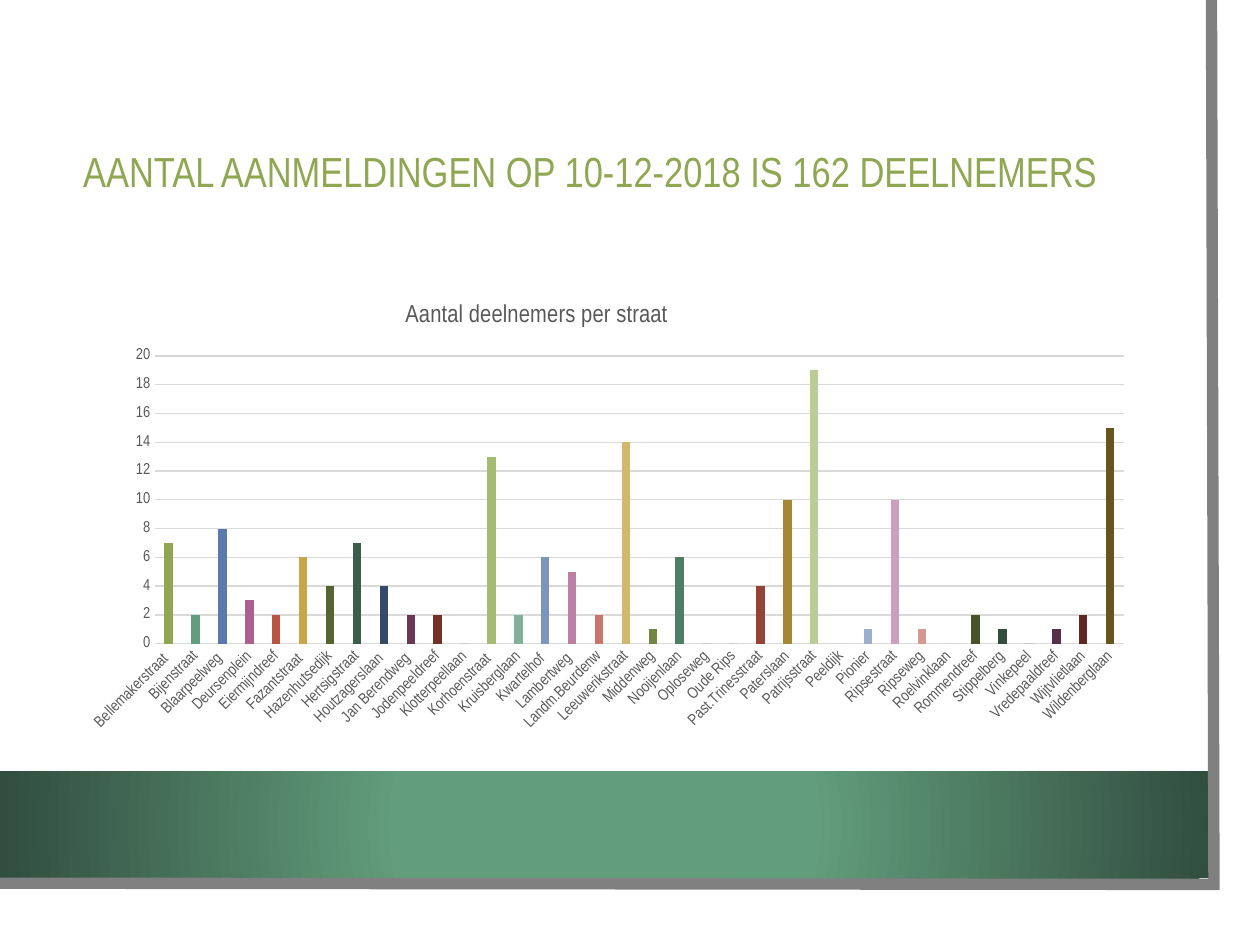
from lxml.etree import SubElement, fromstring
from pptx import Presentation
from pptx.chart.data import CategoryChartData
from pptx.dml.color import RGBColor
from pptx.enum.chart import XL_CHART_TYPE as ChartType, XL_TICK_MARK as TickMark
from pptx.enum.shapes import MSO_SHAPE as Preset
from pptx.enum.text import MSO_ANCHOR as Anchor, PP_ALIGN as Align
from pptx.oxml.ns import nsdecls, qn
from pptx.util import Pt

FONT = "Arial Narrow"
GREY, GRID = "595959", "D9D9D9"
TITLE = "AANTAL AANMELDINGEN OP 10-12-2018 IS 162 DEELNEMERS"
CHART_TITLE = "Aantal deelnemers per straat"
STREETS = [
    ("Bellemakerstraat ", 7, "8FA751"), ("Bijenstraat", 2, "629D7D"),
    ("Blaarpeelweg ", 8, "5A7AAB"), ("Deursenplein", 3, "AA618F"),
    ("Eiermijndreef", 2, "BA5445"), ("Fazantstraat ", 6, "C8A547"),
    ("Hazenhutsedijk", 4, "566431"), ("Hertsigstraat", 7, "3B5E4B"),
    ("Houtzagerslaan ", 4, "354968"), ("Jan Berendweg ", 2, "683856"),
    ("Jodenpeeldreef", 2, "703229"), ("Klotterpeellaan", 0, "7D6525"),
    ("Korhoenstraat ", 13, "A6BB72"), ("Kruisberglaan", 2, "81B197"),
    ("Kwartelhof ", 6, "7B95BC"), ("Lambertweg ", 5, "BB81A5"),
    ("Landm.Beurdenw", 2, "C8766A"), ("Leeuwerikstraat", 14, "D3B76C"),
    ("Middenweg", 1, "728641"), ("Nooijenlaan", 6, "4E7E64"),
    ("Oploseweg", 0, "46618A"), ("Oude Rips", 0, "8B4B73"),
    ("Past.Trinesstraat", 4, "954337"), ("Paterslaan", 10, "A78732"),
    ("Patrijsstraat", 19, "BCCC95"), ("Peeldijk", 0, "A1C4B1"),
    ("Pionier", 1, "9CAFCD"), ("Ripsestraat", 10, "CCA0BC"),
    ("Ripseweg", 1, "D6988F"), ("Roelvinklaan", 0, "DEC991"),
    ("Rommendreef", 2, "485329"), ("Stippelberg", 1, "314E3E"),
    ("Vinkepeel", 0, "2C3D56"), ("Vredepaaldreef", 1, "572F48"),
    ("Wijtvlietlaan", 2, "5D2A23"), ("Wildenberglaan", 15, "68541F"),
]
BAND_STOPS = [(34, "629D7D"), (100, "314E3E")]
FRAME_POINTS = [(692.3, 0), (693.7, 505.4), (-1.4, 504.7)]
LEFT, WIDTH = 40.3, 614.2
CHART_TOP, CHART_HEIGHT = 162.7, 260.6


def paint(target, color):
    target.solid()
    target.fore_color.rgb = RGBColor.from_string(color)


def style_font(font, size, color):
    font.name, font.size, font.bold = FONT, Pt(size), False
    font.color.rgb = RGBColor.from_string(color)


def style_line(line, color, width):
    paint(line.fill, color)
    line.width = Pt(width)


def write_text(frame, text, size, color, align=None, spacing=None):
    paragraph = frame.paragraphs[0]
    paragraph.alignment, paragraph.line_spacing = align, spacing
    run = paragraph.add_run()
    run.text = text
    style_font(run.font, size, color)


def add_panel(slide, left, top, width, height, color):
    shape = slide.shapes.add_shape(Preset.RECTANGLE, Pt(left), Pt(top), Pt(width), Pt(height))
    shape.shadow.inherit = False
    shape.line.fill.background()
    paint(shape.fill, color)
    return shape


def fill_radial(shape, stops):
    marks = "".join(f'<a:gs pos="{position * 1000}"><a:srgbClr val="{color}"/></a:gs>'
                    for position, color in stops)
    gradient = fromstring(
        f'<a:gradFill {nsdecls("a")} rotWithShape="1"><a:gsLst>{marks}</a:gsLst><a:path path="circle">'
        '<a:fillToRect l="50000" t="50000" r="50000" b="50000"/></a:path></a:gradFill>')
    properties = shape._element.spPr
    properties.replace(properties.find(qn("a:solidFill")), gradient)


def manual_layout(target="", **lengths):
    extents = {"x": WIDTH, "y": CHART_HEIGHT, "w": WIDTH, "h": CHART_HEIGHT}
    modes = "".join(f'<c:{axis}Mode val="edge"/>' for axis in "xy")
    values = "".join(f'<c:{name} val="{length / extents[name]}"/>'
                     for name, length in lengths.items())
    return fromstring(f'<c:layout {nsdecls("c")}><c:manualLayout>{target}{modes}{values}'
                      '</c:manualLayout></c:layout>')


def remove_layouts(element):
    for layout in element.findall(qn("c:layout")):
        element.remove(layout)


def add_backdrop(slide):
    add_panel(slide, 0, 0, 707.8, 523.4, "FFFFFF")
    fill_radial(add_panel(slide, 0, 440.6, 691.2, 61.2, BAND_STOPS[0][1]), BAND_STOPS)
    start, *rest = [(Pt(x), Pt(y)) for x, y in FRAME_POINTS]
    builder = slide.shapes.build_freeform(*start)
    builder.add_line_segments(rest, close=False)
    frame = builder.convert_to_shape()
    frame.shadow.inherit = False
    frame.fill.background()
    style_line(frame.line, "808080", 6.5)
    SubElement(frame._element.spPr.find(qn("a:ln")), qn("a:miter")).set("lim", "800000")


def add_title(slide):
    title = slide.shapes.title
    title.left, title.top, title.width, title.height = Pt(LEFT), Pt(54), Pt(WIDTH), Pt(90.7)
    title.text_frame.vertical_anchor = Anchor.MIDDLE
    title.text_frame.word_wrap = True
    write_text(title.text_frame, TITLE, 24, "8FA751", align=Align.LEFT, spacing=0.9)
    slide.shapes._spTree.append(title._element)


def add_street_chart(slide):
    names, counts, colors = zip(*STREETS)
    data = CategoryChartData()
    data.categories = names
    data.add_series("Series 1", counts)
    chart = slide.shapes.add_chart(ChartType.COLUMN_CLUSTERED, Pt(LEFT), Pt(CHART_TOP),
                                   Pt(WIDTH), Pt(CHART_HEIGHT), data).chart
    style_font(chart.font, 10, "000000")
    chart.has_legend = False
    chart.has_title = True
    write_text(chart.chart_title.text_frame, CHART_TITLE, 14, GREY)
    chart.chart_title.include_in_layout = False
    heading = chart.chart_title._element
    remove_layouts(heading)
    heading.find(qn("c:tx")).addnext(manual_layout(x=188.8, y=6.7))

    plot = chart.plots[0]
    plot.gap_width, plot.overlap, plot.vary_by_categories = 219, -27, False
    for index, color in enumerate(colors):
        paint(plot.series[0].points[index].format.fill, color)
    area = plot._element.getparent()
    remove_layouts(area)
    area.insert(0, manual_layout('<c:layoutTarget val="inner"/>', x=48.4, y=40.7, w=553.4, h=164.5))

    streets, scale = chart.category_axis, chart.value_axis
    for axis in (streets, scale):
        axis.major_tick_mark = axis.minor_tick_mark = TickMark.NONE
        style_font(axis.tick_labels.font, 9, GREY)
    style_line(streets.format.line, GRID, 0.75)
    streets._element.find(qn("c:txPr")).find(qn("a:bodyPr")).set("rot", "-2700000")
    scale.minimum_scale, scale.maximum_scale, scale.major_unit = 0, 20, 2
    scale.format.line.fill.background()
    style_line(scale.major_gridlines.format.line, GRID, 0.75)


def main():
    """Build the slide with registrations per street."""
    presentation = Presentation()
    presentation.slide_width, presentation.slide_height = Pt(720), Pt(540)
    slide = presentation.slides.add_slide(presentation.slide_layouts[5])
    add_backdrop(slide)
    add_title(slide)
    add_street_chart(slide)
    presentation.save("out.pptx")


if __name__ == "__main__":
    main()
